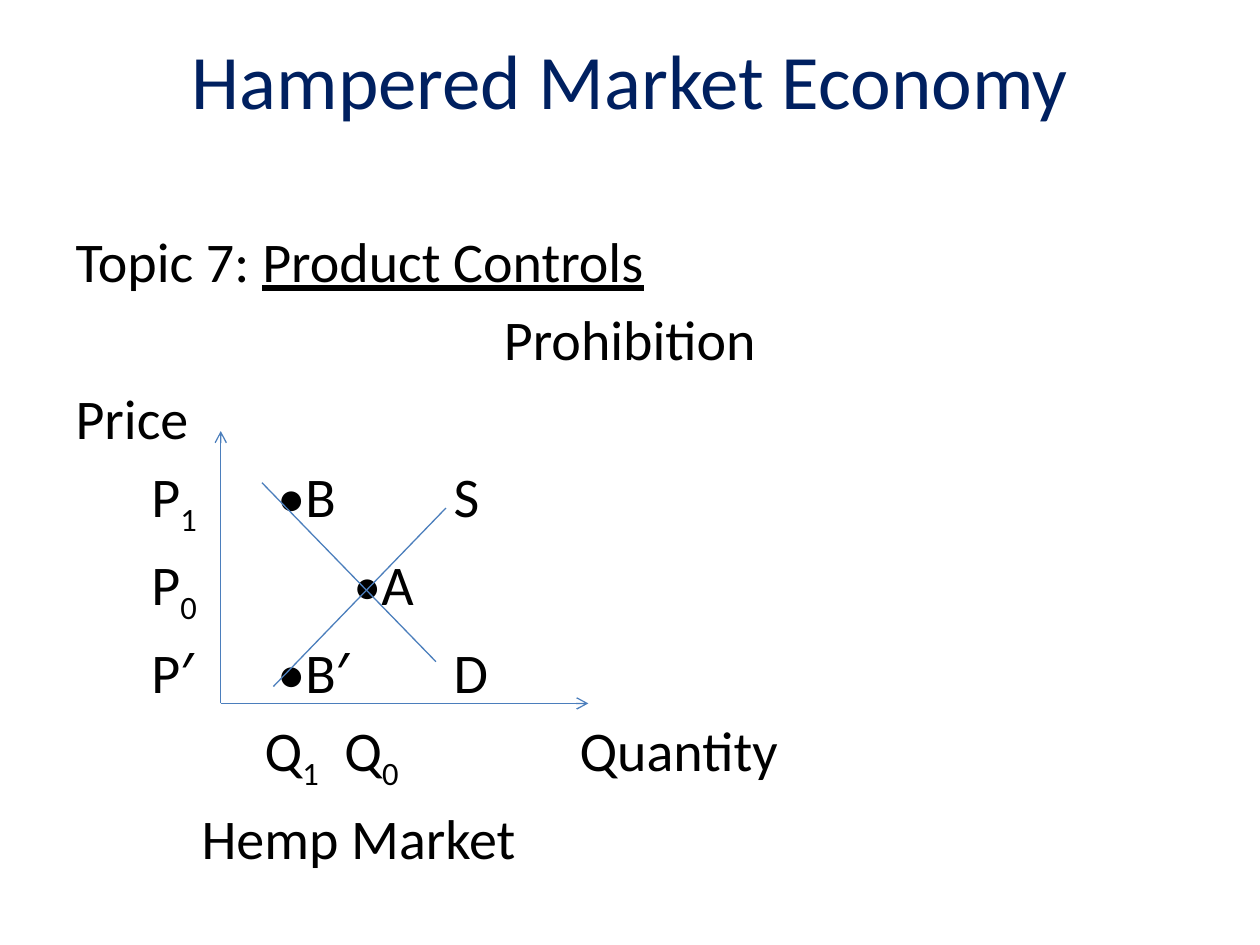
import dataclasses

import pptx
import pptx.dml.color
import pptx.enum.shapes
import pptx.enum.text
import pptx.oxml.ns
import pptx.util

Cm = pptx.util.Cm
Pt = pptx.util.Pt
RGB = pptx.dml.color.RGBColor
Align = pptx.enum.text.PP_ALIGN
Anchor = pptx.enum.text.MSO_ANCHOR


@dataclasses.dataclass(frozen=True)
class Theme:
    font: str = "Calibri"
    navy: RGB = RGB(0x00, 0x20, 0x60)
    black: RGB = RGB(0, 0, 0)
    blue: RGB = RGB(0x4B, 0x7E, 0xBC)
    head: Pt = Pt(44)
    text: Pt = Pt(32)
    line: Pt = Pt(0.75)


THEME = Theme()
LEFT, MID = Align.LEFT, Align.CENTER
UNDER = {"underline": True}

# Columns in cm from the left edge of the text
PRICE, LOW, EVEN, CURVE = 1.53, 4.07, 5.6, 7.62

# Alignment, columns, runs; "_" lowers the character after it
ROWS = [
    (LEFT, [0], [("Topic 7: ", {}), ("Product Controls", UNDER)]),
    (MID, [0], [("Prohibition", {})]),
    (LEFT, [0], [("Price", {})]),
    (LEFT, [PRICE, LOW, CURVE], [("P_1\t•B\tS", {})]),
    (LEFT, [PRICE, EVEN], [("P_0\t•A", {})]),
    (LEFT, [PRICE, LOW, CURVE], [("P′\t•B′\tD", {})]),
    (LEFT, [3.81, 5.42, 10.16], [("Q_1\tQ_0\tQuantity", {})]),
    (LEFT, [2.54], [("Hemp Market", {})]),
]

ORIGIN = (4.45, 14.18)
# Start, end, arrowhead
LINES = [
    (ORIGIN, (4.45, 8.69), True),
    (ORIGIN, (11.86, 14.18), True),
    ((5.28, 9.73), (8.79, 13.34), False),
    ((5.51, 13.84), (8.99, 10.24), False),
]


def put(item, values):
    for name, value in values.items():
        setattr(item, name, value)


def add_tag(parent, tag, **attrs):
    node = pptx.oxml.ns.qn(tag)
    child = parent.makeelement(node, attrs)
    parent.append(child)


def place(shape, left, top, width, height, anchor):
    put(shape, {"left": Cm(left), "top": Cm(top),
                "width": Cm(width), "height": Cm(height)})
    put(shape.text_frame, {"word_wrap": True, "vertical_anchor": anchor,
                           "auto_size": pptx.enum.text.MSO_AUTO_SIZE.NONE})


def add_run(para, text, size, color, extra, low=False):
    run = para.add_run()
    run.text = text
    put(run.font, {"name": THEME.font, "size": size, **extra})
    run.font.color.rgb = color
    if low:
        run.font._element.set("baseline", "-25000")


def add_text(para, text, extra):
    first, *parts = text.split("_")
    pieces = [(first, False)]
    for part in parts:
        pieces += [(part[0], True), (part[1:], False)]
    for piece, low in pieces:
        if piece:
            add_run(para, piece, THEME.text, THEME.black, extra, low)


def set_cols(para, cols):
    """Start at the first column, hang at the second, tab to the third."""
    start, *rest = cols
    hang = rest[0] if rest else start
    values = {"marL": hang, "indent": start - hang}
    if len(rest) > 1:
        values["defTabSz"] = rest[1] - hang
    props = para._p.get_or_add_pPr()
    for name, value in values.items():
        props.set(name, str(int(Cm(value))))
    add_tag(props, "a:buNone")


def fill_title(shape):
    place(shape, 0, 0, 25.4, 3.18, Anchor.MIDDLE)
    para = shape.text_frame.paragraphs[0]
    para.alignment = MID
    add_run(para, "Hampered Market Economy", THEME.head, THEME.navy, {})


def fill_body(shape):
    place(shape, 1.27, 4.44, 22.86, 14.61, Anchor.TOP)
    frame = shape.text_frame
    for index, (align, cols, runs) in enumerate(ROWS):
        para = frame.add_paragraph() if index else frame.paragraphs[0]
        para.alignment = align
        set_cols(para, cols)
        for text, extra in runs:
            add_text(para, text, extra)


def add_line(slide, start, end, arrow):
    ends = [Cm(value) for value in (*start, *end)]
    kind = pptx.enum.shapes.MSO_CONNECTOR.STRAIGHT
    line = slide.shapes.add_connector(kind, *ends)
    line.line.color.rgb = THEME.blue
    line.line.width = THEME.line
    if arrow:
        add_tag(line.line._get_or_add_ln(), "a:tailEnd", type="arrow")
    add_tag(line._element.spPr, "a:effectLst")


def main():
    deck = pptx.Presentation()
    put(deck, {"slide_width": Cm(25.4), "slide_height": Cm(19.05)})
    slide = deck.slides.add_slide(deck.slide_layouts[1])
    fill_title(slide.shapes.title)
    fill_body(slide.placeholders[1])
    for start, end, arrow in LINES:
        add_line(slide, start, end, arrow)
    deck.save("out.pptx")


if __name__ == "__main__":
    main()
